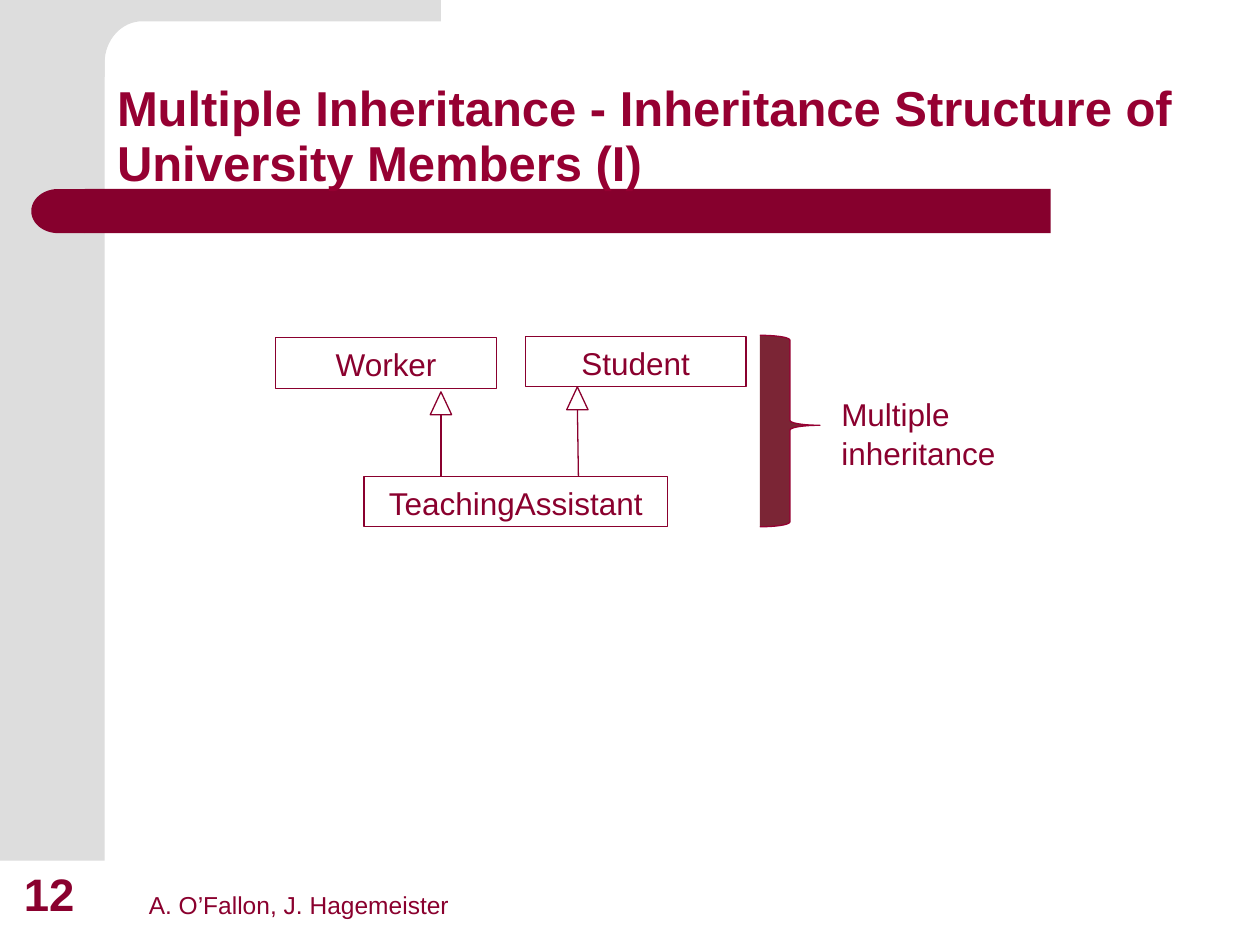
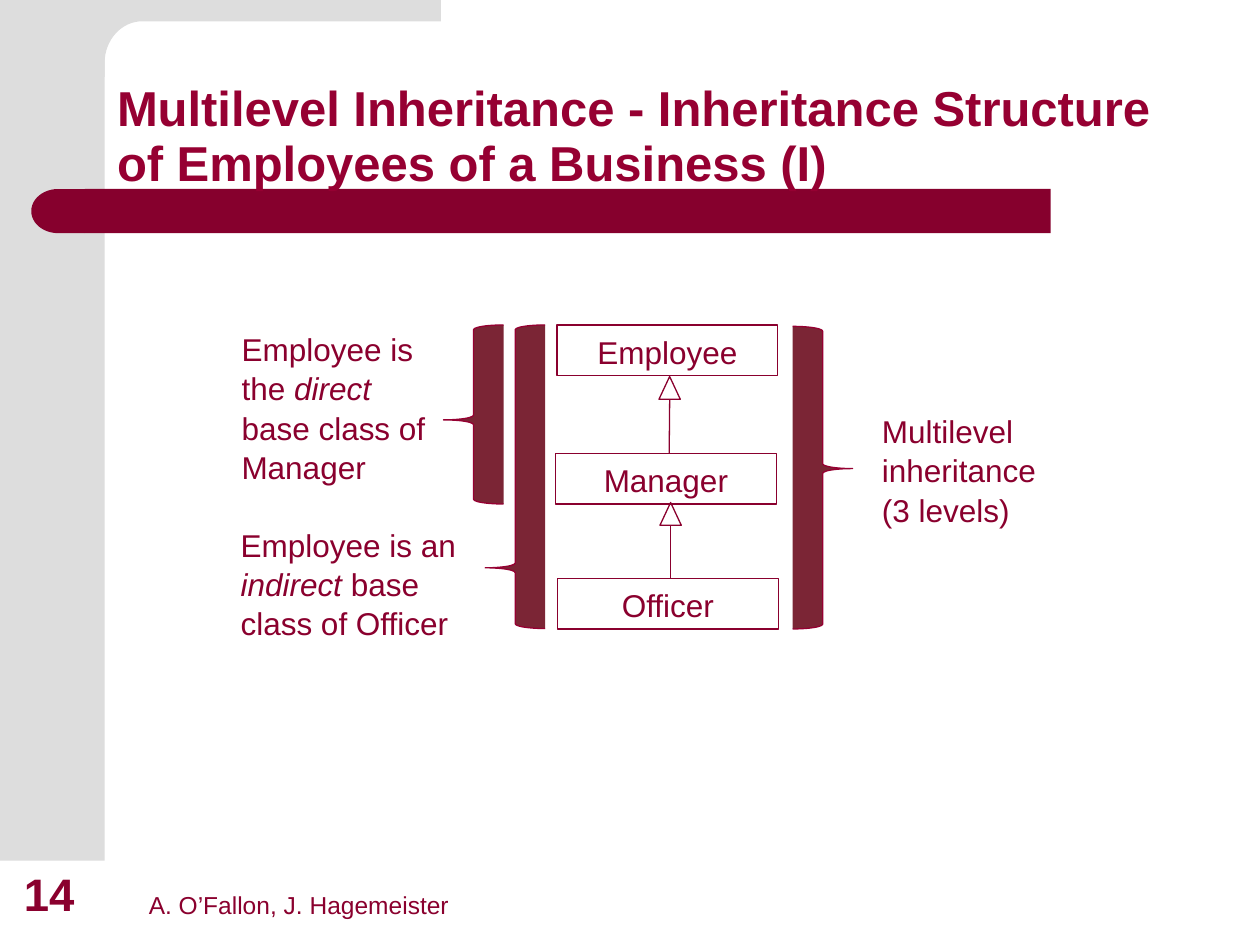
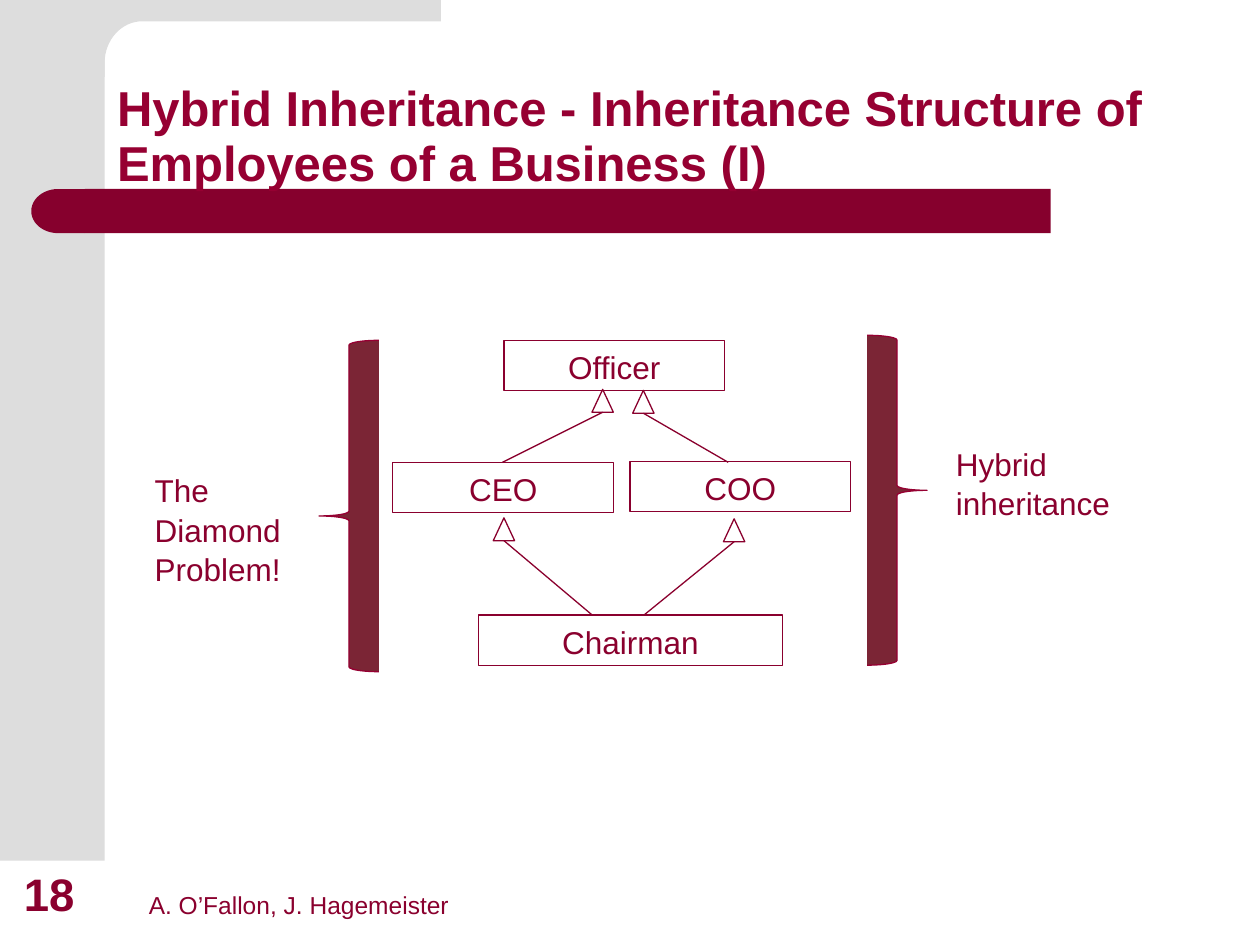
import math
from dataclasses import dataclass

from lxml import etree
from pptx import Presentation
from pptx import util as u
from pptx.dml.color import RGBColor
from pptx.enum import shapes, text
from pptx.oxml.ns import qn


@dataclass(frozen=True)
class Theme:
    font: str = "Arial"
    margin_grey: str = "DDDDDD"
    band: str = "86002D"
    title: str = "960032"
    ink: str = "8A002E"
    brace: str = "7B2535"
    title_size: float = 28
    number_size: float = 26
    body_size: float = 18
    footer_size: float = 14
    line: float = 0.75
    title_leading: float = 0.94
    body_leading: float = 1.04


@dataclass(frozen=True)
class Box:
    """A region in centimetres."""
    left: float
    top: float
    width: float
    height: float

    def sub(self, x, y, width, height):
        return Box(self.left + x, self.top + y, width, height)

    def point(self, x, y):
        return self.left + x, self.top + y

    def emu(self):
        return [u.Cm(v) for v in (self.left, self.top, self.width, self.height)]


THEME = Theme()
PAGE = Box(0, 0, 25.4, 19.05)
TITLE = Box(2.11, 0.84, 22.02, 3.17)
BAND = Box(0.63, 3.81, 20.55, 0.89)
FOOTER = Box(0.23, 17.35, 12.04, 1.34)
DIAGRAM = Box(2.5, 6.5, 21, 7.5)

AUTHORS = "A. O’Fallon, J. Hagemeister"
CLASS_WIDTH, WIDE_CLASS, CLASS_HEIGHT = 4.45, 6.12, 1.02
BRACE_WIDTH = 1.21
HEAD_WIDTH, HEAD_HEIGHT = 0.43, 0.46


# Basic parts
def color(value):
    return RGBColor.from_string(value)


def paint(part, fill=None, line=None):
    part.shadow.inherit = False
    if fill:
        part.fill.solid()
        part.fill.fore_color.rgb = color(fill)
    else:
        part.fill.background()
    if line:
        part.line.color.rgb = color(line)
        part.line.width = u.Pt(THEME.line)
    else:
        part.line.fill.background()
    return part


def preset(slide, kind, box, fill=None, line=None):
    return paint(slide.shapes.add_shape(kind, *box.emu()), fill, line)


def write(part, runs, size, ink=THEME.ink, bold=False, align=text.PP_ALIGN.LEFT,
          anchor=text.MSO_ANCHOR.TOP, leading=None):
    """Fill a part with (words, italic) runs."""
    frame = part.text_frame
    frame.word_wrap = True
    frame.vertical_anchor = anchor
    paragraph = frame.paragraphs[0]
    paragraph.alignment = align
    paragraph.line_spacing = leading
    for words, italic in runs:
        run = paragraph.add_run()
        run.text = words
        run.font.name = THEME.font
        run.font.size = u.Pt(size)
        run.font.bold = bold
        run.font.italic = italic
        run.font.color.rgb = color(ink)


def label(slide, box, runs, size, **style):
    write(slide.shapes.add_textbox(*box.emu()), runs, size, **style)


# Shared slide regions
def draw_margin(slide, box):
    side, height = 2.11, 17.35
    preset(slide, shapes.MSO_SHAPE.RECTANGLE, box.sub(0, 0, side, height),
           THEME.margin_grey)
    # Top strip, joined to the side by a rounded inner corner
    strip_left, strip_right, strip_base = 1.27, 8.89, 0.43
    radius_x, radius_y, steps = 0.76, 0.84, 16
    angles = [math.pi / 2 * step / steps for step in range(steps + 1)]
    corner = [(side + radius_x * (1 - math.sin(a)),
               strip_base + radius_y * (1 - math.cos(a))) for a in angles]
    outline = [(strip_right, 0), (strip_right, strip_base), *corner,
               (side, 1.55), (strip_left, 1.55)]
    points = [tuple(u.Cm(v) for v in box.point(x, y)) for x, y in outline]
    start = [u.Cm(v) for v in box.point(strip_left, 0)]
    builder = slide.shapes.build_freeform(*start)
    builder.add_line_segments(points, close=True)
    paint(builder.convert_to_shape(), THEME.margin_grey)


def draw_band(slide, box):
    cap = 1.08
    preset(slide, shapes.MSO_SHAPE.RECTANGLE,
           box.sub(cap, 0, box.width - cap, box.height), THEME.band)
    round_end = preset(slide, shapes.MSO_SHAPE.FLOWCHART_DELAY,
                       box.sub(0, 0, cap, box.height), THEME.band)
    round_end.rotation = 180


def draw_title(slide, box, title):
    label(slide, box, [(title, False)], THEME.title_size, ink=THEME.title,
          bold=True, anchor=text.MSO_ANCHOR.BOTTOM, leading=THEME.title_leading)


def draw_footer(slide, box, number):
    bottom = text.MSO_ANCHOR.BOTTOM
    label(slide, box.sub(2.52, 0, 9.52, 1.32), [(AUTHORS, False)],
          THEME.footer_size, anchor=bottom)
    label(slide, box.sub(0, 0, 1.63, box.height), [(str(number), False)],
          THEME.number_size, bold=True, anchor=bottom)


# Diagram parts
def draw_class(slide, box, name, x, y, width=CLASS_WIDTH):
    part = preset(slide, shapes.MSO_SHAPE.RECTANGLE,
                  box.sub(x, y, width, CLASS_HEIGHT), line=THEME.ink)
    write(part, [(name, False)], THEME.body_size,
          align=text.PP_ALIGN.CENTER, leading=THEME.body_leading)


def draw_inheritance(slide, box, tip, tail):
    """Hollow arrow whose head touches the base class at tip."""
    x, y = tip
    preset(slide, shapes.MSO_SHAPE.ISOSCELES_TRIANGLE,
           box.sub(x - HEAD_WIDTH / 2, y, HEAD_WIDTH, HEAD_HEIGHT), line=THEME.ink)
    ends = (*box.point(x, y + HEAD_HEIGHT), *box.point(*tail))
    stem = slide.shapes.add_connector(shapes.MSO_CONNECTOR.STRAIGHT,
                                      *[u.Cm(v) for v in ends])
    stem.line.color.rgb = color(THEME.ink)
    stem.line.width = u.Pt(THEME.line)
    etree.SubElement(stem._element.spPr, qn("a:effectLst"))


def draw_brace(slide, box, x, y, height, points_left=False, tip=0.47):
    brace = preset(slide, shapes.MSO_SHAPE.RIGHT_BRACE,
                   box.sub(x, y, BRACE_WIDTH, height), THEME.brace, THEME.title)
    brace.adjustments[0] = 0.08
    brace.adjustments[1] = tip
    brace.rotation = 180 if points_left else 0


def draw_diagram(slide, box, classes, arrows, braces, notes):
    for item in classes:
        draw_class(slide, box, *item)
    for tip, tail in arrows:
        draw_inheritance(slide, box, tip, tail)
    for item in braces:
        draw_brace(slide, box, *item)
    for place, runs in notes:
        label(slide, box.sub(*place), runs, THEME.body_size,
              leading=THEME.body_leading)


# Content: places are relative to the diagram box
LESSONS = [
    dict(
        number=12,
        title="Multiple Inheritance - Inheritance Structure of University Members (I)",
        classes=[("Student", 8.09, 0.28), ("Worker", 3.06, 0.31),
                 ("TeachingAssistant", 4.84, 3.1, WIDE_CLASS)],
        arrows=[((6.39, 1.4), (6.39, 3.1)), ((9.14, 1.3), (9.16, 3.1))],
        braces=[(12.82, 0.26, 3.86)],
        notes=[((14.21, 1.3, 3.81, 1.8), [("Multiple inheritance", False)])],
    ),
    dict(
        number=14,
        title="Multilevel Inheritance - Inheritance Structure of Employees "
              "of a Business (I)",
        classes=[("Employee", 8.73, 0.05), ("Manager", 8.7, 2.64),
                 ("Officer", 8.74, 5.16)],
        arrows=[((11, 1.09), (10.99, 2.64)), ((11.02, 3.63), (11.02, 5.18))],
        braces=[(6.44, 0.05, 3.61, True), (7.28, 0.05, 6.12, True, 0.2),
                (13.48, 0.08, 6.1)],
        notes=[
            ((2.12, 0, 4.27, 3.33), [("Employee is the ", False), ("direct", True),
                                     (" base class of Manager", False)]),
            ((2.1, 3.94, 5.44, 2.57), [("Employee is an ", False), ("indirect", True),
                                       (" base class of Officer", False)]),
            ((15.03, 1.65, 3.81, 2.57), [("Multilevel inheritance (3 levels)", False)]),
        ],
    ),
    dict(
        number=18,
        title="Hybrid Inheritance - Inheritance Structure of Employees "
              "of a Business (I)",
        classes=[("Officer", 7.66, 0.36), ("COO", 10.2, 2.8), ("CEO", 5.42, 2.82),
                 ("Chairman", 7.15, 5.9, WIDE_CLASS)],
        arrows=[((9.65, 1.35), (7.63, 2.82)), ((10.47, 1.37), (12.18, 2.82)),
                ((7.66, 3.94), (9.44, 5.9)), ((12.3, 3.96), (10.48, 5.9))],
        braces=[(14.98, 0.26, 6.65), (3.93, 0.36, 6.68, True)],
        notes=[
            ((16.52, 2.31, 4.06, 1.8), [("Hybrid inheritance", False)]),
            ((0.37, 2.85, 4.06, 2.57), [("The Diamond Problem!", False)]),
        ],
    ),
]


def build_lesson(deck, number, title, **diagram):
    slide = deck.slides.add_slide(deck.slide_layouts[6])
    draw_margin(slide, PAGE)
    draw_band(slide, BAND)
    draw_title(slide, TITLE, title)
    draw_footer(slide, FOOTER, number)
    draw_diagram(slide, DIAGRAM, **diagram)


def main():
    deck = Presentation()
    deck.slide_width, deck.slide_height = u.Cm(PAGE.width), u.Cm(PAGE.height)
    for lesson in LESSONS:
        build_lesson(deck, **lesson)
    deck.save("out.pptx")


if __name__ == "__main__":
    main()
